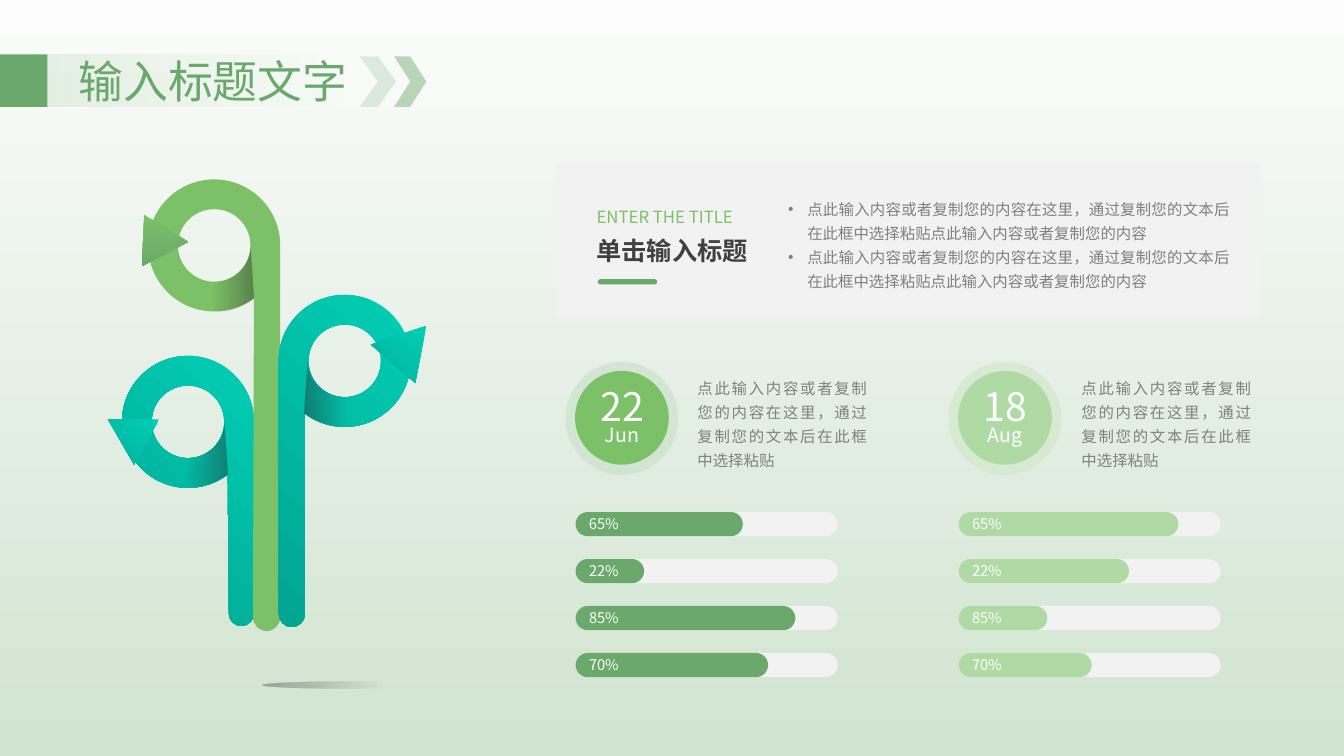
"""Build a green slide with a looping arrow plant, dates and progress bars."""
from math import ceil, cos, radians, sin, tan

from lxml import etree
from pptx import Presentation
from pptx.dml.color import RGBColor
from pptx.enum.shapes import MSO_SHAPE
from pptx.enum.text import MSO_ANCHOR, PP_ALIGN
from pptx.oxml.ns import qn
from pptx.util import Inches, Pt

RECT, OVAL = MSO_SHAPE.RECTANGLE, MSO_SHAPE.OVAL
PILL, CHEVRON = MSO_SHAPE.ROUNDED_RECTANGLE, MSO_SHAPE.CHEVRON
LEFT, MID, EVEN = PP_ALIGN.LEFT, PP_ALIGN.CENTER, PP_ALIGN.JUSTIFY
CENTER = MSO_ANCHOR.MIDDLE
FREE, TEXT = "free", "text"

WHITE = RGBColor(0xFF, 0xFF, 0xFF)
MIST = RGBColor(0xFB, 0xFC, 0xFB)
SAGE = RGBColor(0xD1, 0xE4, 0xD1)
PALE = RGBColor(0xF2, 0xF2, 0xF2)
GRAY = RGBColor(0x80, 0x80, 0x80)
DARK = RGBColor(0x40, 0x40, 0x40)
BLACK = RGBColor(0x26, 0x26, 0x26)
GREEN = RGBColor(0x6A, 0xA8, 0x6B)
LEAF = RGBColor(0x7C, 0xC1, 0x67)
MINT = RGBColor(0xB0, 0xDA, 0xA4)
HALO = RGBColor(0xC3, 0xDC, 0xC4)
HAZE = RGBColor(0xCB, 0xE6, 0xC2)
TEAL = RGBColor(0x02, 0xCE, 0xB5)
DEEP = RGBColor(0x02, 0xA5, 0x91)
POOL = RGBColor(0x02, 0xB1, 0x9C)

FONT = "Noto Sans CJK SC"
NOTE = "点此输入内容或者复制您的内容在这里，通过复制您的文本后在此框中选择粘贴"
LONG = NOTE + "点此输入内容或者复制您的内容"
CELL = Inches(0.1)
COLS, ROWS = 133.33, 75

deck = Presentation()
deck.slide_width, deck.slide_height = round(COLS * CELL), ROWS * CELL
slide = deck.slides.add_slide(deck.slide_layouts[6])
back = slide.background.fill
back.gradient()
back.gradient_angle = 270
for stop, tone in zip(back.gradient_stops, (MIST, SAGE)):
    stop.color.rgb = tone


def draw(kind, spot, *stops, turn=0):
    """Add a shape in grid cells; stops are colour, opacity, position; outlines are arcs."""
    if kind == FREE:
        pen, bends, count = None, [], 0
        for path in spot:
            dots = []
            for x, y, size, start, end in path:
                steps = ceil(abs(end - start) / 90)
                sweep = radians(end - start) / max(steps, 1)
                pull = 4 / 3 * tan(sweep / 4)
                for i in range(steps + 1):
                    t = radians(start) + sweep * i
                    dx, dy = size * cos(t), size * sin(t)
                    dot = (round((x + dx) * CELL), round((y + dy) * CELL))
                    if i:
                        bends.append(count + len(dots) - 1)
                        hold = (x + dx + pull * dy, y + dy - pull * dx)
                        dots += [tuple(round(v * CELL) for v in p) for p in (lead, hold)]
                    if i or dot not in dots[-1:]:
                        dots.append(dot)
                    lead = (x + dx - pull * dy, y + dy + pull * dx)
            if pen:
                pen.move_to(*dots[0])
            else:
                pen = slide.shapes.build_freeform(*dots[0], scale=1.0)
            pen.add_line_segments(dots[1:])
            count += len(dots) - 1
        shape = pen.convert_to_shape()
        lines = list(shape._element.iter(qn("a:lnTo")))
        for i in bends:
            curve = etree.Element(qn("a:cubicBezTo"))
            lines[i].addprevious(curve)
            for line in lines[i:i + 3]:
                curve.append(line[0])
                line.getparent().remove(line)
    else:
        box = [round(v * CELL) for v in spot]
        if kind == TEXT:
            shape = slide.shapes.add_textbox(*box)
            shape.text_frame.word_wrap = True
            return shape
        shape = slide.shapes.add_shape(kind, *box)
    if kind == PILL:
        shape.adjustments[0] = 0.5
    shape.shadow.inherit = False
    shape.line.fill.background()
    if len(stops) == 1:
        shape.fill.solid()
        shape.fill.fore_color.rgb = stops[0][0]
    else:
        shape.fill.gradient()
        shape.fill.gradient_angle = 360 - turn
        for stop, (tone, _, place) in zip(shape.fill.gradient_stops, stops):
            stop.color.rgb = tone
            stop.position = place / 100
    for mark, (_, alpha, _) in zip(shape._element.spPr.iter(qn("a:srgbClr")), stops):
        if alpha < 100:
            etree.SubElement(mark, qn("a:alpha")).set("val", str(alpha * 1000))
    return shape


def write(shape, words, size, tone, align=LEFT, space=None, bold=None, dot=False):
    """Fill a shape with text, one paragraph for each line."""
    shape.text_frame.text = words
    for para in shape.text_frame.paragraphs:
        para.alignment, para.line_spacing = align, space
        font = para.font
        font.name, font.size, font.bold = FONT, Pt(size), bold
        font.color.rgb = tone
        props = para._p.get_or_add_pPr()
        base = props.find(qn("a:defRPr"))
        base.find(qn("a:latin")).addnext(etree.Element(qn("a:ea"), typeface=FONT))
        if dot:
            props.set("marL", str(Inches(0.19)))
            props.set("indent", str(-Inches(0.19)))
            base.addprevious(etree.Element(qn("a:buFont"), typeface="Arial"))
            base.addprevious(etree.Element(qn("a:buChar"), char="•"))


draw(RECT, (55.2, 16.1, 69.8, 15.5), (PALE, 100, 0))
cards = [
    (56.1, "22", "Jun", LEAF, HALO, GREEN, (16.6, 6.8, 21.8, 19.1)),
    (94.1, "18", "Aug", MINT, HAZE, MINT, (21.8, 16.9, 8.8, 13.2)),
]
for x, day, month, disc, ring, bar, widths in cards:
    draw(OVAL, (x, 35.9, 11.2, 11.2), (ring, 50, 0))
    draw(OVAL, (x + 0.95, 36.8, 9.3, 9.3), (disc, 100, 0))
    write(draw(TEXT, (x + 0.7, 37.4, 9.9, 5.7)), day, 28, WHITE, MID)
    write(draw(TEXT, (x + 0.65, 41.45, 9.9, 3.4)), month, 14, WHITE, MID)
    for row, (rate, width) in enumerate(zip(("65%", "22%", "85%", "70%"), widths)):
        y = 50.8 + row * 4.66
        draw(PILL, (x + 1, y, 26, 2.4), (PALE, 100, 0))
        done = draw(PILL, (x + 1, y, width, 2.4), (bar, 100, 0))
        done.text_frame.vertical_anchor = CENTER
        write(done, rate, 10.5, WHITE)

draw(OVAL, (26, 67.6, 18.2, 0.7), (BLACK, 35, 0), (BLACK, 0, 66))
OUT, HOLE = 6.55, 3.6
loops = [
    (18.65, 41.85, 62.1, 2.5, 1, ((TEAL, 100, 0), (DEEP, 100, 99))),
    (21.25, 24.35, 62.6, 2.7, 1, ((LEAF, 100, 0),)),
    (34.2, 35.8, 62.2, 2.6, -1, ((TEAL, 100, 0), (DEEP, 100, 99))),
]
shades = []
for x, y, foot, stem, side, stops in loops:
    cap = stem / 2
    ring = [(x, y, OUT, 0, -270), (x, y, OUT, -270, -307)]
    ring.append((x + side * (OUT - cap), foot - cap, cap, 180, 0))
    shade = [(x, y, OUT, 53, 90), (x, y, OUT, 90, 121)]
    shade += [(x, y, HOLE, 115, 90), (x, y, HOLE, 90, 0)]
    if side < 0:
        ring, shade = [[(*arc[:3], 180 - arc[3], 180 - arc[4]) for arc in part]
                       for part in (ring, shade)]
    draw(FREE, [ring, [(x, y, HOLE, 0, 360)]], *stops, turn=135)
    shades.append((shade, 90 + 90 * side))

tips = [
    ([(15.8, 41.6), (13.3, 46.1), (10.7, 41.6)], TEAL, POOL, 135),
    ([(18.7, 24), (14.1, 26.4), (14.3, 21.3)], LEAF, GREEN, 90),
    ([(42.3, 32.3), (41.2, 38), (36.8, 34.2)], TEAL, POOL, 135),
]
for path, light, deep, turn in tips:
    path = [(x, y, 0, 0, 0) for x, y in path]
    draw(FREE, [path], (light, 100, 0), (deep, 100, 99), turn=turn)
for path, turn in reversed(shades):
    draw(FREE, [path], (BLACK, 40, 0), (BLACK, 0, 57), turn=turn)

for x in (68.2, 106.3):
    write(draw(TEXT, (x, 36.6, 18.8, 10.6)), NOTE, 11, GRAY, EVEN, 1.3)
write(draw(TEXT, (58.2, 22.3, 21.9, 4.3)), "单击输入标题", 18, DARK, EVEN, 1.2, True)
write(draw(TEXT, (58.2, 19.6, 21.9, 3.2)), "ENTER THE TITLE", 12, LEAF, EVEN, 1.2)
draw(PILL, (59.3, 27.7, 5.9, 0.5), (GREEN, 100, 0))
write(draw(TEXT, (77.2, 18.8, 45.8, 10.6)), f"{LONG}\n{LONG}", 11, GRAY, EVEN, 1.3, dot=True)

draw(RECT, (4.7, 5.4, 30.5, 5.2), (GREEN, 14, 0), (GREEN, 0, 100))
write(draw(TEXT, (6.8, 4.8, 34.5, 6.4)), "输入标题文字", 32, GREEN)
draw(RECT, (0, 5.4, 4.7, 5.2), (GREEN, 100, 0))
draw(CHEVRON, (35.7, 5.6, 3.6, 5), (GREEN, 20, 0))
draw(CHEVRON, (39.1, 5.6, 3.2, 5), (GREEN, 44, 0))

deck.save("out.pptx")
